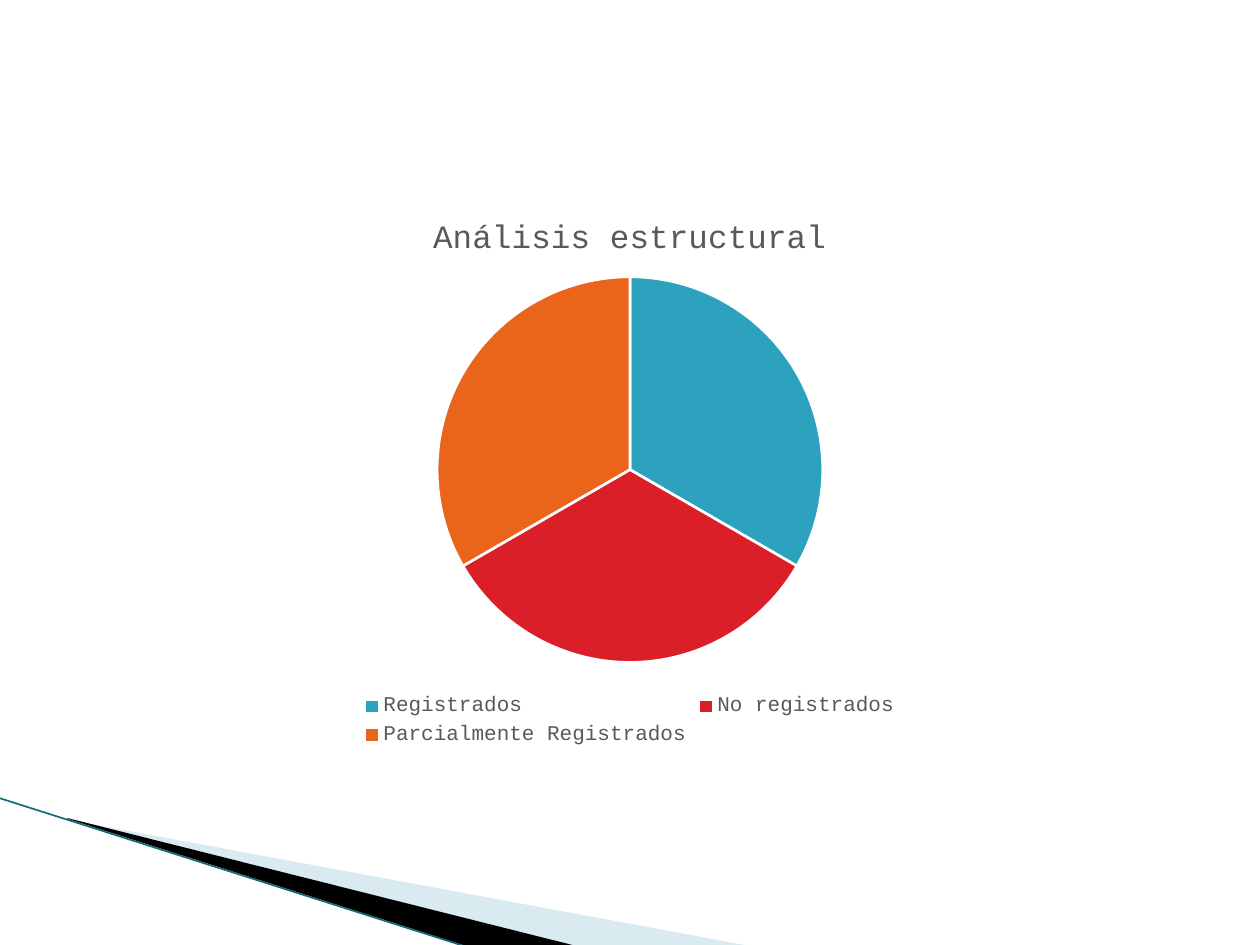
from dataclasses import dataclass
from lxml.etree import SubElement
from pptx import Presentation
from pptx.chart.data import CategoryChartData
from pptx.dml.color import RGBColor
from pptx.enum.chart import XL_CHART_TYPE, XL_LEGEND_POSITION
from pptx.enum.shapes import MSO_CONNECTOR
from pptx.oxml import parse_xml
from pptx.oxml.ns import nsdecls, qn
from pptx.util import Emu, Pt

SCALE = 914400 / 126


@dataclass(frozen=True)
class Theme:
    font: str = "Courier New"
    title: float = 18.6
    legend: int = 12
    grey: str = "595959"
    white: str = "FFFFFF"
    black: str = "000000"
    pale: str = "A0CBDC"
    edge: str = "16697A"
    slices: tuple = ("2DA2BF", "DA1F28", "EB641B")


THEME = Theme()


def px(n):
    return Emu(round(n * SCALE))


def rgb(code):
    return RGBColor.from_string(code)


def style(font, size):
    font.name, font.size, font.bold = THEME.font, Pt(size), False
    font.color.rgb = rgb(THEME.grey)


def add_wedge(slide, left, top, points, color, alpha=None):
    (x, y), *rest = [(left + x, top + y) for x, y in points]
    draft = slide.shapes.build_freeform(x, y, scale=SCALE)
    draft.add_line_segments(rest, close=True)
    wedge = draft.convert_to_shape()
    wedge.shadow.inherit = False
    wedge.fill.solid()
    wedge.fill.fore_color.rgb = rgb(color)
    wedge.line.fill.background()
    if alpha:
        tone = wedge.fill._xPr.find(".//" + qn("a:srgbClr"))
        SubElement(tone, qn("a:alpha"), val=str(alpha * 1000))


def add_corner(slide, left, top):
    # Pale and black wedges
    add_wedge(slide, left, top,
              [(69, 22), (750, 148), (575, 148), (69, 21)], THEME.pale, 40)
    add_wedge(slide, left, top,
              [(67, 20), (576, 148), (469, 149), (68, 21)], THEME.black)
    # Thin lower edge
    edge = slide.shapes.add_connector(
        MSO_CONNECTOR.STRAIGHT, px(left - 1), px(top),
        px(left + 467), px(top + 149))
    edge.line.color.rgb = rgb(THEME.edge)
    edge.line.width = Pt(0.95)
    SubElement(edge._element.spPr, qn("a:effectLst"))


def place_plot(chart, x, y, w, h):
    area = chart._chartSpace.chart.plotArea
    for old in area.findall(qn("c:layout")):
        area.remove(old)
    area.insert(0, parse_xml(
        f'<c:layout {nsdecls("c")}><c:manualLayout>'
        '<c:layoutTarget val="inner"/>'
        '<c:xMode val="edge"/><c:yMode val="edge"/>'
        f'<c:x val="{x}"/><c:y val="{y}"/><c:w val="{w}"/><c:h val="{h}"/>'
        '</c:manualLayout></c:layout>'))


def add_pie(slide, left, top, width, height):
    data = CategoryChartData()
    data.categories = ["Registrados", "No registrados",
                       "Parcialmente Registrados"]
    data.add_series("Series 1", (33, 33, 33))
    chart = slide.shapes.add_chart(
        XL_CHART_TYPE.PIE, px(left), px(top), px(width), px(height),
        data).chart
    chart.font.name, chart.font.size = THEME.font, Pt(10)

    # Title
    chart.has_title = True
    run = chart.chart_title.text_frame.paragraphs[0].add_run()
    run.text = "Análisis estructural"
    style(run.font, THEME.title)
    chart.chart_title.include_in_layout = False

    # Legend
    chart.has_legend = True
    chart.legend.position = XL_LEGEND_POSITION.BOTTOM
    chart.legend.include_in_layout = False
    style(chart.legend.font, THEME.legend)

    # Slices
    plot = chart.plots[0]
    plot.vary_by_categories = True
    for i, color in enumerate(THEME.slices):
        part = plot.series[0].points[i].format
        part.fill.solid()
        part.fill.fore_color.rgb = rgb(color)
        part.line.color.rgb = rgb(THEME.white)
        part.line.width = Pt(1.5)
    place_plot(chart, 0.27, 0.15, 0.46, 0.69)


def main():
    deck = Presentation()
    deck.slide_width, deck.slide_height = px(1260), px(945)
    slide = deck.slides.add_slide(deck.slide_layouts[6])
    add_corner(slide, 0, 798)
    add_pie(slide, 210, 193, 840, 559)
    deck.save("out.pptx")


if __name__ == "__main__":
    main()
